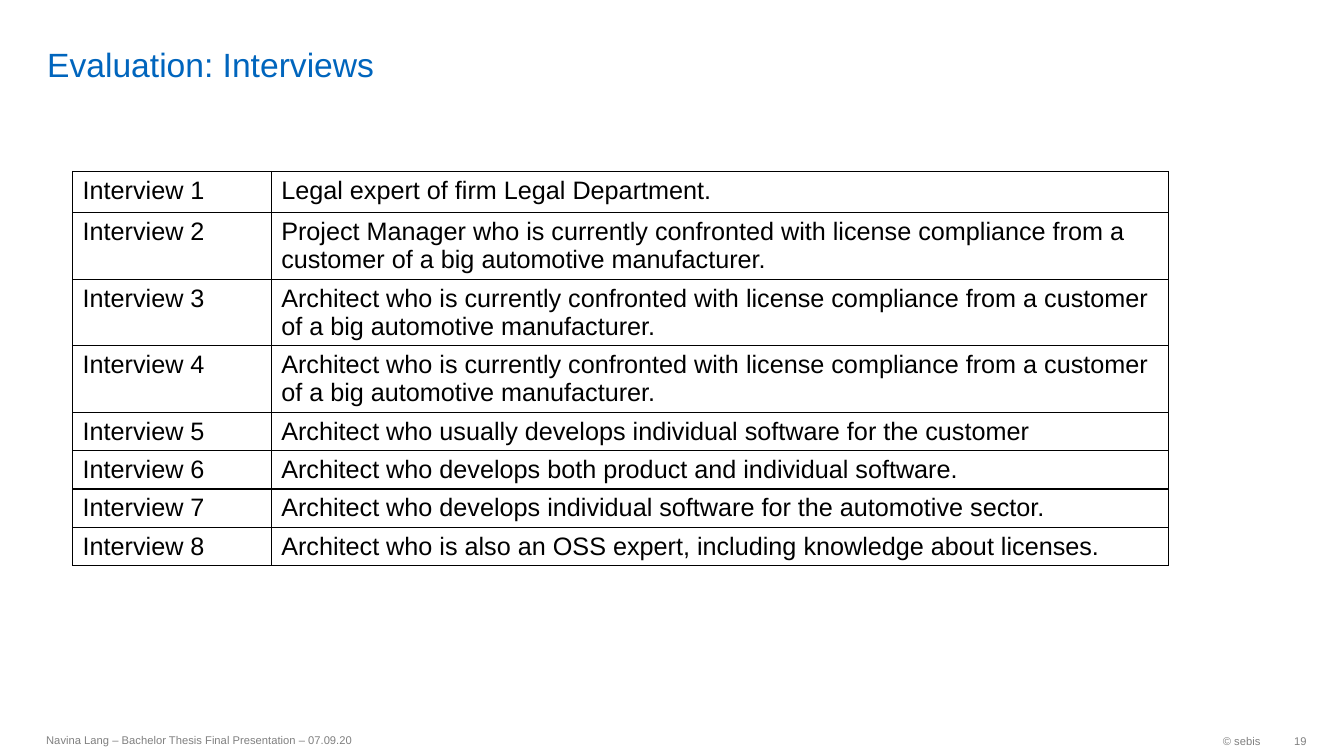
from dataclasses import dataclass

import lxml.etree
import pptx
import pptx.dml.color
import pptx.enum.text
import pptx.oxml
import pptx.oxml.ns
import pptx.slide
import pptx.table
import pptx.text.text
import pptx.util

Inches = pptx.util.Inches
RGBColor = pptx.dml.color.RGBColor
Align = pptx.enum.text.PP_ALIGN
Anchor = pptx.enum.text.MSO_ANCHOR

BLACK = RGBColor(0x00, 0x00, 0x00)
BLUE = RGBColor(0x00, 0x65, 0xBD)
GREY = RGBColor(0x80, 0x80, 0x80)
FONT = "Arial"
BORDER_WIDTH = pptx.util.Pt(1)
COLUMN_WIDTHS = (1.97, 8.9)


@dataclass(frozen=True)
class Label:
    text: str
    left: float
    top: float
    width: float
    height: float
    size: int = 8
    color: RGBColor = GREY
    align: Align = Align.LEFT
    anchor: Anchor = Anchor.MIDDLE
    right_inset: float = 0.1
    vertical_inset: float = 0.05


@dataclass(frozen=True)
class Interview:
    partner: str
    height: float


LABELS = (
    Label("Evaluation: Interviews", 0.37, 0.05, 11.58, 0.79, size=24,
          color=BLUE, anchor=Anchor.BOTTOM, vertical_inset=0),
    Label("© sebis", 10.26, 7.19, 2.34, 0.32, align=Align.RIGHT),
    Label("Navina Lang – Bachelor Thesis Final Presentation – 07.09.20",
          0.36, 7.18, 6.3, 0.32),
    Label("19", 12.6, 7.19, 0.36, 0.32, align=Align.RIGHT, right_inset=0),
)

ARCHITECT = Interview(
    "Architect who is currently confronted with license compliance from a "
    "customer of a big automotive manufacturer.", 0.66)

INTERVIEWS = (
    Interview("Legal expert of firm Legal Department.", 0.41),
    Interview("Project Manager who is currently confronted with license "
              "compliance from a customer of a big automotive manufacturer.", 0.66),
    ARCHITECT,
    ARCHITECT,
    Interview("Architect who usually develops individual software for the customer", 0.38),
    Interview("Architect who develops both product and individual software.", 0.38),
    Interview("Architect who develops individual software for the automotive sector.", 0.38),
    Interview("Architect who is also an OSS expert, including knowledge about licenses.", 0.38),
)


def write_text(frame: pptx.text.text.TextFrame, text: str, size: int,
               color: RGBColor, align: Align = Align.LEFT) -> None:
    frame.text = text
    para = frame.paragraphs[0]
    para.alignment = align
    span = para.runs[0]
    span.font.name = FONT
    span.font.size = pptx.util.Pt(size)
    span.font.color.rgb = color


def add_label(page: pptx.slide.Slide, label: Label) -> None:
    box = page.shapes.add_textbox(Inches(label.left), Inches(label.top),
                                  Inches(label.width), Inches(label.height))
    frame = box.text_frame
    frame.word_wrap = True
    frame.vertical_anchor = label.anchor
    frame.margin_left = Inches(0.1)
    frame.margin_right = Inches(label.right_inset)
    frame.margin_top = frame.margin_bottom = Inches(label.vertical_inset)
    write_text(frame, label.text, label.size, label.color, label.align)


def add_borders(cell: pptx.table._Cell) -> None:
    properties = cell._tc.get_or_add_tcPr()
    for position, edge in enumerate(("lnL", "lnR", "lnT", "lnB")):
        border = pptx.oxml.parse_xml(
            f'<a:{edge} {pptx.oxml.ns.nsdecls("a")} w="{BORDER_WIDTH}">'
            f'<a:solidFill><a:srgbClr val="{BLACK}"/></a:solidFill></a:{edge}>')
        properties.insert(position, border)


def add_interviews(page: pptx.slide.Slide) -> None:
    height = sum(interview.height for interview in INTERVIEWS)
    table = page.shapes.add_table(
        len(INTERVIEWS), len(COLUMN_WIDTHS), Inches(0.72), Inches(1.7),
        Inches(sum(COLUMN_WIDTHS)), Inches(height)).table
    table.first_row = False
    table.horz_banding = False
    for column, width in zip(table.columns, COLUMN_WIDTHS):
        column.width = Inches(width)
    for number, (row, interview) in enumerate(zip(table.rows, INTERVIEWS), start=1):
        row.height = Inches(interview.height)
        for cell, text in zip(row.cells, (f"Interview {number}", interview.partner)):
            write_text(cell.text_frame, text, 18, BLACK)
            cell.fill.background()
            add_borders(cell)


def main() -> None:
    deck = pptx.Presentation()
    deck.slide_width = Inches(13.33)
    deck.slide_height = Inches(7.5)
    page = deck.slides.add_slide(deck.slide_layouts[6])
    add_interviews(page)
    for label in LABELS:
        add_label(page, label)
    deck.save("out.pptx")


if __name__ == "__main__":
    main()
